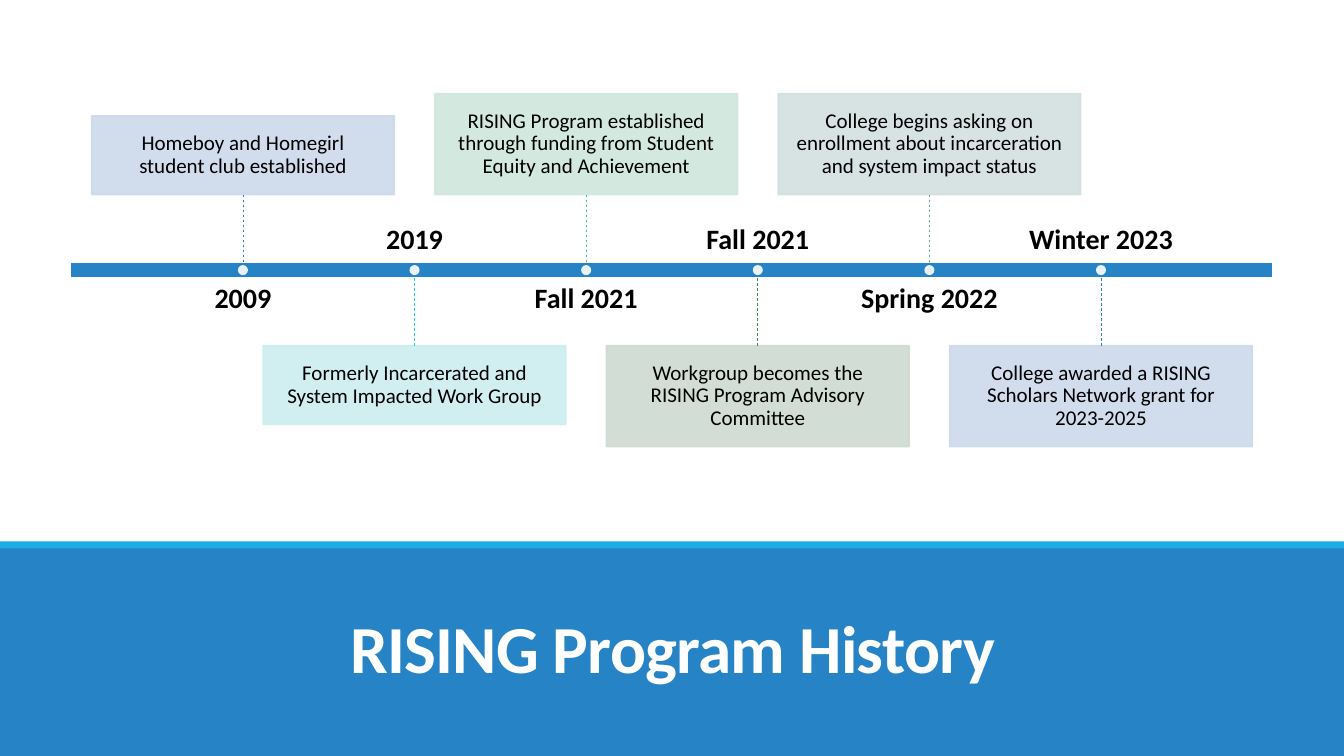
import pptx
import pptx.util
import pptx.dml.color
import pptx.enum.dml
import pptx.enum.shapes
import pptx.enum.text
import pptx.oxml
import pptx.oxml.ns

# Content: date, event, card colour, stem colour, card height
TITLE = "RISING Program History"
EVENTS = [
    ("2009", "Homeboy and Homegirl student club established", "CDD9EA", "2683C6", 0.78),
    ("2019", "Formerly Incarcerated and System Impacted Work Group", "CDEDF0", "27CED7", 0.78),
    ("Fall 2021", "RISING Program established through funding from Student Equity and Achievement",
     "CFE7DD", "42BA97", 1),
    ("Fall 2021", "Workgroup becomes the RISING Program Advisory Committee", "CEDAD1", "3E8853", 1),
    ("Spring 2022", "College begins asking on enrollment about incarceration and system impact status",
     "D3E0DF", "62A39F", 1),
    ("Winter 2023", "College awarded a RISING Scholars Network grant for 2023-2025", "CDD9EA", "2683C6", 1),
]
THEME = {
    "font": "Calibri", "title": 48, "date": 20, "event": 15,
    "blue": "2683C6", "cyan": "1CADE4", "white": "FFFFFF", "black": "000000", "opacity": 90,
}

# Layout, in inches
WIDTH, HEIGHT = 13.33, 7.5
FOOTER_TOP, ACCENT_TOP, ACCENT_HEIGHT = 5.42, 5.37, 0.07
BAR_LEFT, BAR_TOP, BAR_WIDTH, BAR_HEIGHT = 0.7, 2.6, 11.92, 0.16
FIRST_CENTER, STEP = 2.41, 1.702
CARD_WIDTH, STEM, DOT = 3, 0.67, 0.1
DATE_WIDTH, DATE_HEIGHT, DATE_GAP = 2.72, 0.45, 0.065

INCH = pptx.util.Inches
SHAPE = pptx.enum.shapes.MSO_SHAPE
ANCHOR = pptx.enum.text.MSO_ANCHOR


def rgb(color):
    return pptx.dml.color.RGBColor.from_string(color)


def set_opacity(fill_format, percent):
    color = fill_format.fore_color._xFill[0]
    alpha = pptx.oxml.parse_xml(
        f'<a:alpha {pptx.oxml.ns.nsdecls("a")} val="{percent * 1000}"/>')
    color.append(alpha)


def add_box(slide, kind, left, top, width, height, color, line=None, opacity=100):
    shape = slide.shapes.add_shape(kind, INCH(left), INCH(top), INCH(width), INCH(height))
    shape.shadow.inherit = False
    shape.fill.solid()
    shape.fill.fore_color.rgb = rgb(color)
    if line:
        shape.line.color.rgb = rgb(line)
        shape.line.width = pptx.util.Pt(1.25)
    else:
        shape.line.fill.background()
    if opacity < 100:
        set_opacity(shape.fill, opacity)
        if line:
            set_opacity(shape.line.fill, opacity)
    return shape


def write(shape, text, size, color, anchor, bold=False, inset=0, spacing=0.9):
    frame = shape.text_frame
    frame.word_wrap = True
    frame.auto_size = pptx.enum.text.MSO_AUTO_SIZE.NONE
    frame.vertical_anchor = anchor
    frame.margin_left = frame.margin_right = INCH(inset)
    frame.margin_top = frame.margin_bottom = INCH(inset)
    paragraph = frame.paragraphs[0]
    paragraph.alignment = pptx.enum.text.PP_ALIGN.CENTER
    paragraph.line_spacing = spacing
    run = paragraph.add_run()
    run.text = text
    run.font.name = THEME["font"]
    run.font.size = pptx.util.Pt(size)
    run.font.bold = bold
    run.font.color.rgb = rgb(color)
    return run


def add_stem(slide, center, start, end, color):
    stem = slide.shapes.add_connector(
        pptx.enum.shapes.MSO_CONNECTOR.STRAIGHT,
        INCH(center), INCH(start), INCH(center), INCH(end))
    stem.line.color.rgb = rgb(color)
    stem.line.width = pptx.util.Pt(0.5)
    stem.line.dash_style = pptx.enum.dml.MSO_LINE.DASH
    stem._element.spPr.append(
        pptx.oxml.parse_xml(f'<a:effectLst {pptx.oxml.ns.nsdecls("a")}/>'))


def add_event(slide, index, date, event, card_color, stem_color, card_height):
    center = FIRST_CENTER + index * STEP
    bar_bottom = BAR_TOP + BAR_HEIGHT
    # Cards alternate above and below the bar, with the date on the other side
    if index % 2 == 0:
        stem_start, stem_end = BAR_TOP - STEM, BAR_TOP
        card_top = stem_start - card_height
        date_top, date_anchor = bar_bottom + DATE_GAP, ANCHOR.TOP
    else:
        stem_start, stem_end = bar_bottom, bar_bottom + STEM
        card_top = stem_end
        date_top, date_anchor = BAR_TOP - DATE_GAP - DATE_HEIGHT, ANCHOR.BOTTOM

    label = slide.shapes.add_textbox(
        INCH(center - DATE_WIDTH / 2), INCH(date_top), INCH(DATE_WIDTH), INCH(DATE_HEIGHT))
    write(label, date, THEME["date"], THEME["black"], date_anchor, bold=True)
    card = add_box(slide, SHAPE.RECTANGLE, center - CARD_WIDTH / 2, card_top,
                   CARD_WIDTH, card_height, card_color, card_color, THEME["opacity"])
    write(card, event, THEME["event"], THEME["black"], ANCHOR.MIDDLE, inset=0.16)
    add_stem(slide, center, stem_start, stem_end, stem_color)
    add_box(slide, SHAPE.OVAL, center - DOT / 2, BAR_TOP + (BAR_HEIGHT - DOT) / 2,
            DOT, DOT, THEME["white"], opacity=THEME["opacity"])


def main():
    presentation = pptx.Presentation()
    presentation.slide_width, presentation.slide_height = INCH(WIDTH), INCH(HEIGHT)
    slide = presentation.slides.add_slide(presentation.slide_layouts[5])

    # Footer band with the title
    add_box(slide, SHAPE.RECTANGLE, 0, FOOTER_TOP, WIDTH, HEIGHT - FOOTER_TOP, THEME["blue"])
    title = slide.shapes.title
    title.left, title.top, title.width, title.height = map(INCH, (1.17, 5.74, 11, 1.13))
    run = write(title, TITLE, THEME["title"], THEME["white"], ANCHOR.BOTTOM,
                bold=True, inset=0.05, spacing=0.85)
    run.font._element.set("spc", "-50")
    slide.shapes._spTree.append(title._element)  # bring in front of the band
    add_box(slide, SHAPE.RECTANGLE, 0, ACCENT_TOP, WIDTH, ACCENT_HEIGHT, THEME["cyan"])

    # Timeline
    add_box(slide, SHAPE.RECTANGLE, BAR_LEFT, BAR_TOP, BAR_WIDTH, BAR_HEIGHT,
            THEME["blue"], THEME["white"])
    for index, event in enumerate(EVENTS):
        add_event(slide, index, *event)

    presentation.save("out.pptx")


if __name__ == "__main__":
    main()
